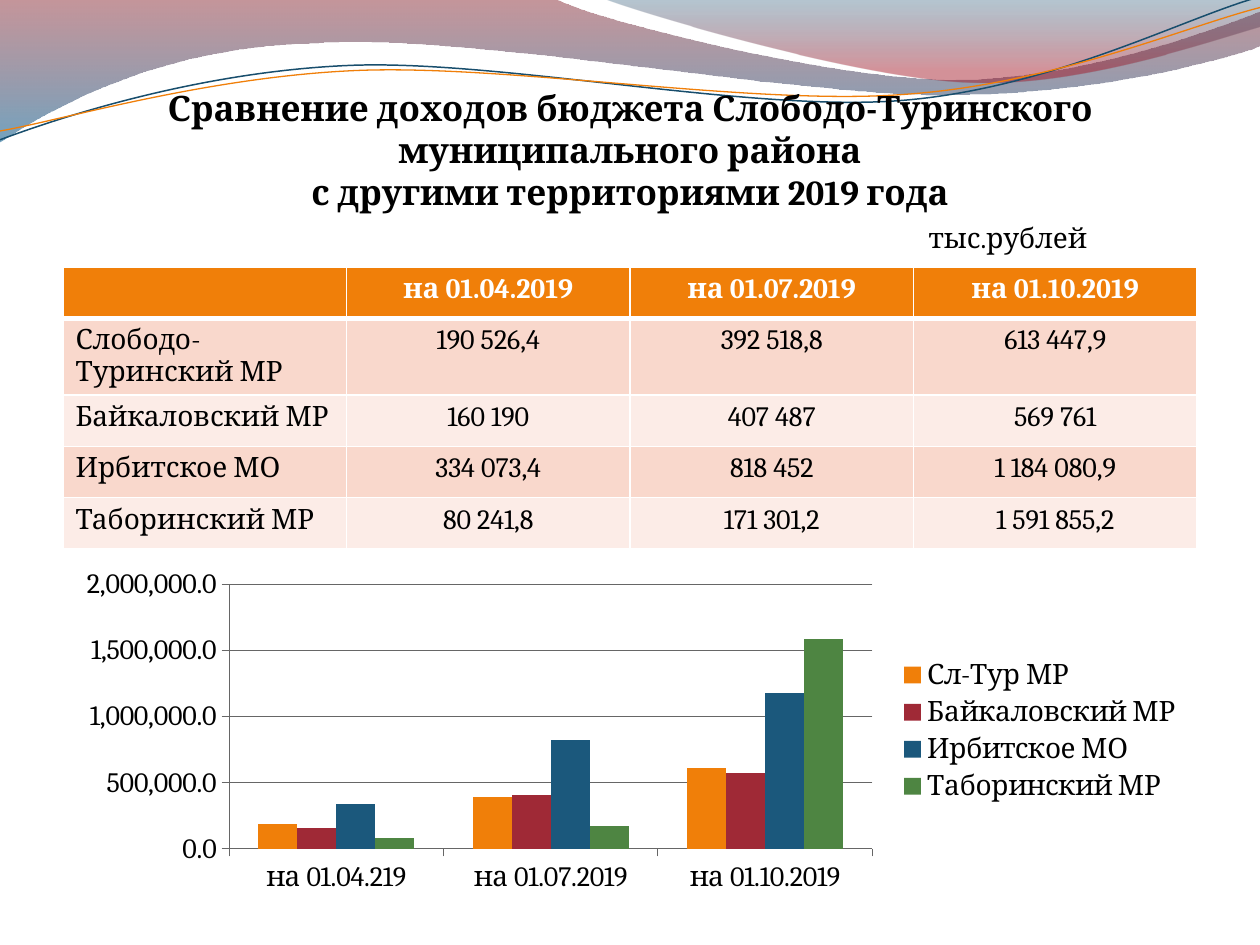
from dataclasses import dataclass

from lxml.etree import SubElement
from pptx import Presentation
from pptx.chart.data import CategoryChartData
from pptx.dml.color import RGBColor
from pptx.enum.chart import XL_CHART_TYPE, XL_LEGEND_POSITION, XL_TICK_MARK
from pptx.enum.text import MSO_ANCHOR, PP_ALIGN
from pptx.oxml.ns import qn
from pptx.util import Inches, Pt

FONT = "Cambria"
BLACK, WHITE, GREY, ORANGE = "000000", "FFFFFF", "666666", "F07F09"
BANDS = ("F9D8CC", "FCECE7")


@dataclass
class Stop:
    at: float
    color: str
    alpha: int


@dataclass
class Wave:
    """A band with gradient stops, or a plain line.

    Each step holds one end point, or three points of a Bezier curve.
    """
    start: tuple
    steps: list
    stops: tuple = ()
    color: str = ""
    width: float = 0


@dataclass
class Series:
    name: str
    color: str
    vals: tuple


WAVES = [
    Wave((0, 0), [
        (4.4, -0.01),
        (4.76, 0.17, 6.64, 0.63, 7.58, 0.63),
        (8.53, 0.63, 9.58, 0.26, 10, 0.09),
        (10.01, 0.36),
        (9.83, 0.44, 8.7, 0.76, 7.46, 0.75),
        (6.22, 0.75, 3.82, 0.28, 2.57, 0.34),
        (1.29, 0.36, 0.46, 0.83, -0.01, 1.13),
    ], stops=(Stop(0, "7E1621", 45), Stop(1, "005689", 55))),
    Wave((4.79, -0.01), [
        (5.09, 0.11, 6.82, 0.62, 7.69, 0.65),
        (8.56, 0.69, 9.61, 0.32, 10, 0.21),
        (10, 0),
    ], stops=(Stop(0, "094467", 30), Stop(0.8, "A10F1F", 45))),
    Wave((0, 1.11), [
        (0.48, 0.93, 1.58, 0.57, 2.77, 0.52),
        (3.95, 0.47, 5.93, 0.89, 7.13, 0.8),
        (8.33, 0.71, 9.38, 0.15, 9.98, -0.02),
    ], color="184E6D", width=0.85),
    Wave((0, 1.04), [
        (0.47, 0.96, 1.64, 0.61, 2.83, 0.56),
        (4.03, 0.51, 5.97, 0.84, 7.17, 0.75),
        (8.36, 0.67, 9.41, 0.21, 10, 0.06),
    ], color=ORANGE, width=0.75),
]

ROWS = [
    ("", "на 01.04.2019", "на 01.07.2019", "на 01.10.2019"),
    ("Слободо-Туринский МР", "190 526,4", "392 518,8", "613 447,9"),
    ("Байкаловский МР", "160 190", "407 487", "569 761"),
    ("Ирбитское МО", "334 073,4", "818 452", "1 184 080,9"),
    ("Таборинский МР", "80 241,8", "171 301,2", "1 591 855,2"),
]

DATES = ("на 01.04.219", "на 01.07.2019", "на 01.10.2019")
SERIES = [
    Series("Сл-Тур МР", ORANGE, (190000, 390000, 610000)),
    Series("Байкаловский МР", "9F2936", (160000, 410000, 570000)),
    Series("Ирбитское МО", "1B587C", (340000, 820000, 1180000)),
    Series("Таборинский МР", "4E8542", (80000, 170000, 1590000)),
]


def rgb(code: str) -> RGBColor:
    return RGBColor.from_string(code)


def style(font, size: float, color: str = BLACK, bold: bool = False) -> None:
    font.name, font.size, font.bold = FONT, Pt(size), bold
    font.color.rgb = rgb(color)


def bend(shape, steps: list) -> None:
    """Join each three straight pieces of a curved step into one Bezier curve."""
    route = next(shape.element.iter(qn("a:path")))
    lines = iter(route.findall(qn("a:lnTo")))
    for step in steps:
        group = [next(lines) for _ in range(len(step) // 2)]
        if len(group) == 3:
            curve = SubElement(route, qn("a:cubicBezTo"))
            group[0].addprevious(curve)
            for line in group:
                curve.append(line[0])
                route.remove(line)


def draw_wave(slide, wave: Wave) -> None:
    points = [pair for step in wave.steps for pair in zip(step[::2], step[1::2])]
    points = [(Inches(x), Inches(y)) for x, y in points]
    pen = slide.shapes.build_freeform(*map(Inches, wave.start))
    pen.add_line_segments(points, close=bool(wave.stops))
    shape = pen.convert_to_shape()
    bend(shape, wave.steps)
    shape.shadow.inherit = False
    if not wave.stops:
        shape.fill.background()
        shape.line.color.rgb = rgb(wave.color)
        shape.line.width = Pt(wave.width)
        return
    shape.line.fill.background()
    shape.fill.gradient()
    shape.fill.gradient_angle = 270
    for mark, stop in zip(shape.fill.gradient_stops, wave.stops):
        mark.position = stop.at
        mark.color.rgb = rgb(stop.color)
    for node, stop in zip(shape.element.iter(qn("a:srgbClr")), wave.stops):
        SubElement(node, qn("a:alpha"), val=str(stop.alpha * 1000))


def set_title(slide) -> None:
    title = slide.shapes.title
    slide.shapes.element.append(title.element)
    title.left, title.top = Inches(0.5), Inches(0.77)
    title.width, title.height = Inches(9), Inches(1.25)
    frame = title.text_frame
    frame.word_wrap = True
    frame.vertical_anchor = MSO_ANCHOR.BOTTOM
    frame.margin_left = frame.margin_right = frame.margin_bottom = 0
    head, unit = frame.paragraphs[0], frame.add_paragraph()
    head.add_run().text = "Сравнение доходов бюджета Слободо-Туринского муниципального района"
    head.add_line_break()
    head.add_run().text = "с другими территориями 2019 года"
    unit.text = "тыс.рублей"
    unit._p.get_or_add_pPr().set("marL", str(Inches(6)))
    for par, size, bold in ((head, 20, True), (unit, 16, False)):
        par.alignment = PP_ALIGN.CENTER
        par.line_spacing = Pt(24)
        par.space_before = Pt(0)
        style(par.font, size, bold=bold)


def edge(cell, side: str, width: float) -> None:
    line = SubElement(cell._tc.get_or_add_tcPr(), qn(f"a:ln{side}"), w=str(Pt(width)))
    fill = SubElement(line, qn("a:solidFill"))
    SubElement(fill, qn("a:srgbClr"), val=WHITE)


def add_grid(slide) -> None:
    table = slide.shapes.add_table(len(ROWS), len(ROWS[0]), Inches(0.5), Inches(2.12),
                                   Inches(9), Inches(2.03)).table
    for r, texts in enumerate(ROWS):
        for c, text in enumerate(texts):
            cell = table.cell(r, c)
            for side in "LRTB":
                thick = (r, side) in ((0, "B"), (1, "T"))
                edge(cell, side, 3 if thick else 1)
            cell.fill.solid()
            cell.fill.fore_color.rgb = rgb(BANDS[(r - 1) % 2] if r else ORANGE)
            par = cell.text_frame.paragraphs[0]
            par.text = text
            par.alignment = PP_ALIGN.CENTER if c else PP_ALIGN.LEFT
            style(par.font, 16, BLACK if r else WHITE, bold=r == 0)


def add_bars(slide) -> None:
    data = CategoryChartData(number_format="#,##0.0")
    data.categories = DATES
    for item in SERIES:
        data.add_series(item.name, item.vals)
    chart = slide.shapes.add_chart(XL_CHART_TYPE.COLUMN_CLUSTERED, Inches(0.51), Inches(4.46),
                                   Inches(8.98), Inches(2.68), data).chart
    style(chart.font, 16)
    chart.has_title = False
    chart.has_legend = True
    chart.legend.position = XL_LEGEND_POSITION.RIGHT
    chart.legend.include_in_layout = False
    plot = chart.plots[0]
    plot.gap_width, plot.overlap, plot.vary_by_categories = 150, 0, False
    for bar, item in zip(plot.series, SERIES):
        bar.format.fill.solid()
        bar.format.fill.fore_color.rgb = rgb(item.color)
    scale = chart.value_axis
    scale.has_major_gridlines = True
    scale.tick_labels.number_format = "#,##0.0"
    scale.tick_labels.number_format_is_linked = False
    for axis in (scale, chart.category_axis):
        axis.major_tick_mark = XL_TICK_MARK.OUTSIDE
    for part in (scale, chart.category_axis, scale.major_gridlines):
        part.format.line.color.rgb = rgb(GREY)
        part.format.line.width = Pt(0.5)


def main() -> None:
    deck = Presentation()
    deck.slide_width, deck.slide_height = Inches(10), Inches(7.5)
    slide = deck.slides.add_slide(deck.slide_layouts[5])
    for wave in WAVES:
        draw_wave(slide, wave)
    set_title(slide)
    add_grid(slide)
    add_bars(slide)
    deck.save("out.pptx")


if __name__ == "__main__":
    main()
